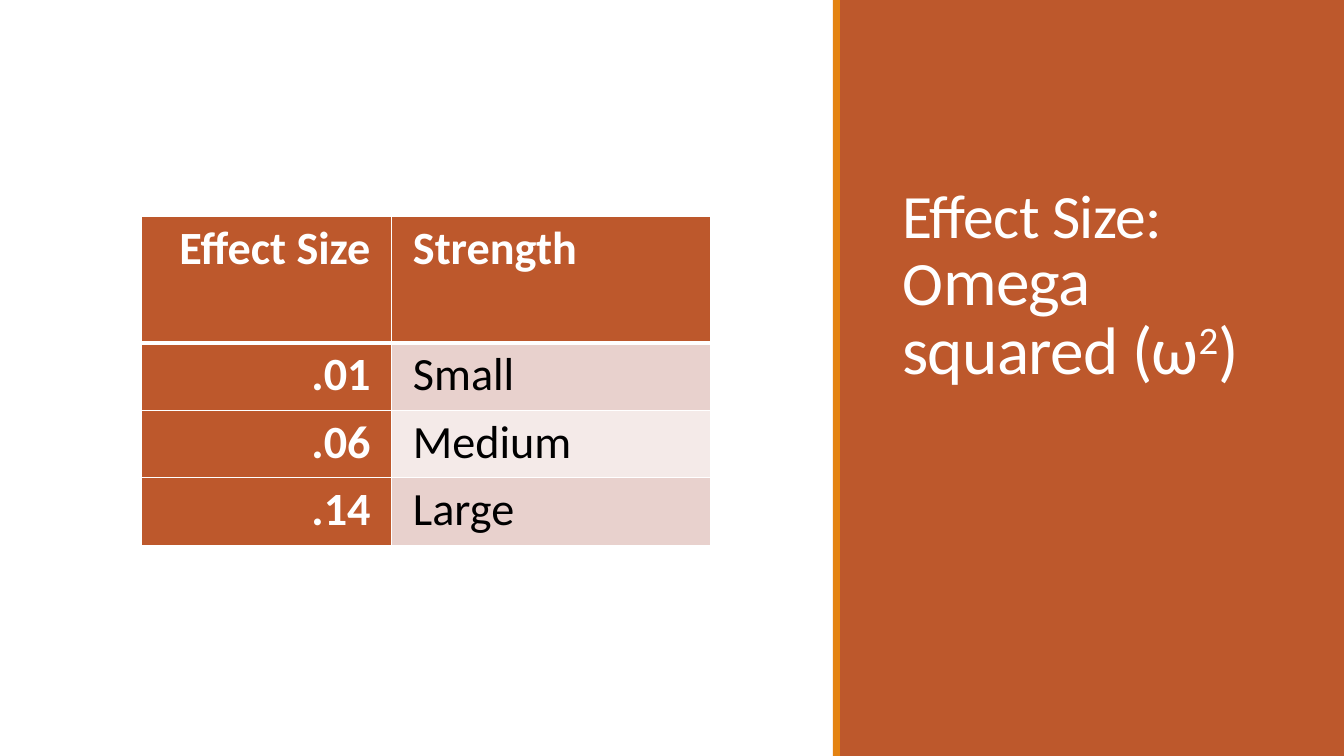
from dataclasses import dataclass

from lxml.etree import SubElement
from pptx import Presentation
from pptx.dml.color import RGBColor
from pptx.enum.shapes import MSO_SHAPE
from pptx.enum.text import MSO_ANCHOR, PP_ALIGN
from pptx.oxml.ns import qn
from pptx.util import Inches, Pt


@dataclass(frozen=True)
class Theme:
    font: str = "Calibri"
    rust: str = "BD582C"
    amber: str = "E48312"
    white: str = "FFFFFF"
    black: str = "000000"
    bands: tuple = ("E8D1CD", "F4EAE8")
    lead: int = 44
    title: int = 48
    body: int = 33


THEME = Theme()
WIDTH, HEIGHT = 13.33, 7.5
ROWS = [("Effect Size", "Strength"), (".01", "Small"), (".06", "Medium"), (".14", "Large")]


def paint(item, color):
    item.fill.solid()
    item.fill.fore_color.rgb = RGBColor.from_string(color)


def write(para, text, size=THEME.body, color=THEME.white, bold=False, track=0, base=0):
    """Add a run; track is in points and base in percent."""
    run = para.add_run()
    run.text = text
    font = run.font
    font.name, font.size, font.bold = THEME.font, Pt(size), bold
    font.color.rgb = RGBColor.from_string(color)
    props = run._r.get_or_add_rPr()
    if track:
        props.set("spc", str(int(track * 100)))
    if base:
        props.set("baseline", str(base * 1000))


def add_bar(slide, left, top, width, height, color):
    bar = slide.shapes.add_shape(
        MSO_SHAPE.RECTANGLE, Inches(left), Inches(top), Inches(width), Inches(height))
    bar.shadow.inherit = False
    paint(bar, color)
    bar.line.fill.background()


def add_panel(slide, left, top, width, height):
    """Draw the title panel with its edge stripe."""
    edge = 0.07
    add_bar(slide, left, top, width, height, THEME.rust)
    add_bar(slide, left - edge, top, edge, height, THEME.amber)
    box = slide.shapes.add_textbox(
        Inches(left + 0.52), Inches(top + 0.7), Inches(width * 0.8), Inches(3.2))
    frame = box.text_frame
    frame.word_wrap = True
    frame.vertical_anchor = MSO_ANCHOR.BOTTOM
    para = frame.paragraphs[0]
    para.line_spacing = 0.85
    write(para, "Effect Size: O", size=THEME.lead, track=-0.5)
    for text, base in (("mega squared (ω", 0), ("2", 30), (")", 0)):
        write(para, text, size=THEME.title, track=-0.5, base=base)


def add_rules(cell, **widths):
    """Set the white cell borders, with widths in points by side."""
    props = cell._tc.get_or_add_tcPr()
    for side in "LRTB":
        line = SubElement(props, qn(f"a:ln{side}"), w=str(Pt(widths.get(side, 1))))
        SubElement(SubElement(line, qn("a:solidFill")), qn("a:srgbClr"), val=THEME.white)


def fill_cell(cell, text, row, col):
    head = row == 0 or col == 0
    add_rules(cell, T=3 if row == 1 else 1, B=3 if row == 0 else 1)
    paint(cell, THEME.rust if head else THEME.bands[(row - 1) % 2])
    cell.margin_left = cell.margin_right = Inches(0.21)
    cell.margin_top = cell.margin_bottom = 0
    para = cell.text_frame.paragraphs[0]
    para.alignment = PP_ALIGN.LEFT if col else PP_ALIGN.RIGHT
    para.line_spacing = 1.07
    write(para, text, color=THEME.white if head else THEME.black, bold=head)


def add_grid(slide, left, top, width, height):
    """Draw the effect size table with a tall header row."""
    step = 0.67
    first = width * 0.44
    table = slide.shapes.add_table(
        len(ROWS), 2, Inches(left), Inches(top), Inches(width), Inches(height)).table
    table.first_row = table.horz_banding = False
    for col, size in zip(table.columns, (first, width - first)):
        col.width = Inches(size)
    for num, row in enumerate(table.rows):
        row.height = Inches(step if num else height - step * (len(ROWS) - 1))
    for row, texts in enumerate(ROWS):
        for col, text in enumerate(texts):
            fill_cell(table.cell(row, col), text, row, col)


def main():
    deck = Presentation()
    deck.slide_width, deck.slide_height = Inches(WIDTH), Inches(HEIGHT)
    slide = deck.slides.add_slide(deck.slide_layouts[6])
    split = WIDTH * 0.625
    add_panel(slide, split, 0, WIDTH - split, HEIGHT)
    add_grid(slide, 1.4, 2.15, 5.65, 3.26)
    deck.save("out.pptx")


if __name__ == "__main__":
    main()
